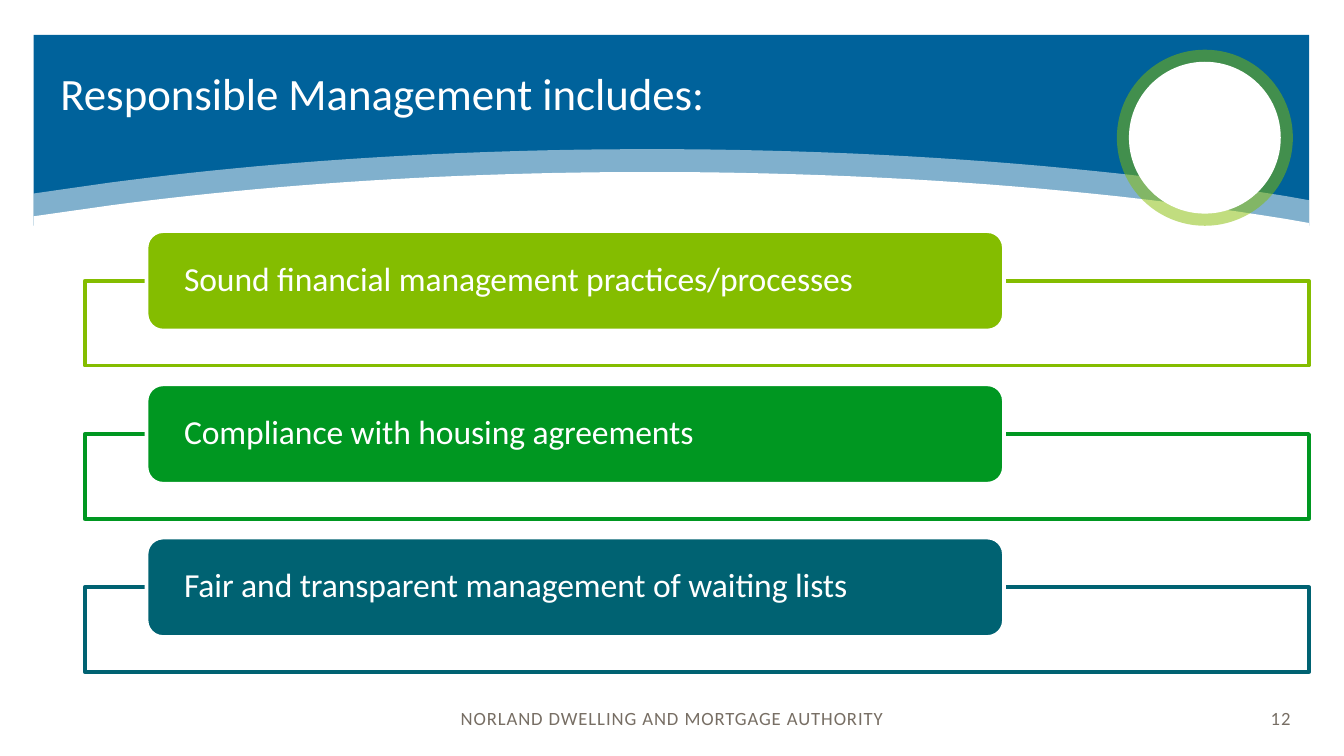
from pptx import Presentation
from pptx.dml.color import RGBColor
from pptx.enum.shapes import MSO_SHAPE
from pptx.enum.text import MSO_ANCHOR, PP_ALIGN
from pptx.oxml.ns import qn
from pptx.util import Pt
from lxml.etree import SubElement

PX = 9144  # EMU per px, 100 px to the inch
FONT = "Calibri"
COLORS = {
    "blue": "00629B",
    "lime": "84BD00",
    "green": "009721",
    "teal": "006272",
    "white": "FFFFFF",
    "grey": "776E64",
}
PRACTICES = [
    ("Sound financial management practices/processes", "lime"),
    ("Compliance with housing agreements", "green"),
    ("Fair and transparent management of waiting lists", "teal"),
]


def px(*lengths):
    return [round(length * PX) for length in lengths]


def rgb(name):
    return RGBColor.from_string(COLORS[name])


def paint(shape, fill, opacity=100, line=None):
    shape.shadow.inherit = False
    shape.fill.solid()
    shape.fill.fore_color.rgb = rgb(fill)
    if opacity < 100:
        color = shape.element.spPr.find(qn("a:solidFill"))[0]
        SubElement(color, qn("a:alpha")).set("val", str(opacity * 1000))
    if line:
        shape.line.color.rgb = rgb(line)
        shape.line.width = Pt(2)
    else:
        shape.line.fill.background()


def add_shape(page, kind, box, fill, opacity=100, line=None):
    shape = page.shapes.add_shape(kind, *px(*box))
    paint(shape, fill, opacity, line)
    return shape


def write(shape, text, size, color, align=PP_ALIGN.LEFT, spacing=0, side=0):
    frame = shape.text_frame
    frame.word_wrap = True
    frame.vertical_anchor = MSO_ANCHOR.MIDDLE
    frame.margin_left = frame.margin_right = side * PX
    frame.margin_top = frame.margin_bottom = 0
    frame.text = text
    para = frame.paragraphs[0]
    para.alignment = align
    span = para.runs[0]
    span.font.name = FONT
    span.font.size = Pt(size)
    span.font.color.rgb = rgb(color)
    if spacing:
        span.font._element.set("spc", str(spacing))
    return para


def curve(points, steps=24):
    """Points along a cubic Bezier curve."""
    for step in range(steps + 1):
        t = step / steps
        weights = ((1 - t) ** 3, 3 * t * (1 - t) ** 2, 3 * t * t * (1 - t), t ** 3)
        yield tuple(sum(w * point[axis] for w, point in zip(weights, points))
                    for axis in (0, 1))


def add_wave(page, left, top, bottom, opacity):
    rise = [(56, 25), (176, 9), (313, 0), (459, 0)]
    fall = [(459, 0), (634, 0), (797, 13), (932, 35)]
    depth = bottom - top
    outline = [(0, 33), *curve(rise), *curve(fall), (949, 38), (949, depth), (0, depth)]
    points = [px(left + x, top + y) for x, y in outline]
    builder = page.shapes.build_freeform(*points[0], scale=1.0)
    builder.add_line_segments(points[1:], close=True)
    paint(builder.convert_to_shape(), "white", opacity)


def add_banner(page, left, top, width, height):
    add_shape(page, MSO_SHAPE.RECTANGLE, (left, top, width, height), "blue")
    for offset, opacity in ((85, 50), (102, 100)):
        add_wave(page, left, top + offset, top + 153, opacity)
    # Ring at the right end
    for inset, fill, opacity in ((0, "lime", 50), (9, "white", 100)):
        size = 131 - 2 * inset
        box = (left + 806 + inset, top + 11 + inset, size, size)
        add_shape(page, MSO_SHAPE.OVAL, box, fill, opacity)
    # Title, brought in front of the banner
    title = page.shapes.title
    page.shapes.element.append(title.element)
    title.left, title.top, title.width, title.height = px(left + 10, top, 786, 89)
    para = write(title, "Responsible Management includes:", 24, "white", side=10)
    para.line_spacing = Pt(26)


def add_practice(page, left, top, width, text, color):
    add_shape(page, MSO_SHAPE.RECTANGLE, (left, top + 37, width, 63), "white", 90, color)
    add_shape(page, MSO_SHAPE.ROUNDED_RECTANGLE,
              (left + 46, top, 638, 74), color, line="white")
    label = page.shapes.add_textbox(*px(left + 50, top + 3, 630, 67))
    para = write(label, text, 18, "white", spacing=-5, side=24)
    para.line_spacing = 0.9


def add_footer(page, left, top, width, height):
    strip = add_shape(page, MSO_SHAPE.RECTANGLE, (left, top, width, height), "white")
    write(strip, "NORLAND DWELLING AND MORTGAGE AUTHORITY", 10, "grey",
          PP_ALIGN.CENTER, 50)
    number = page.shapes.add_textbox(*px(left + 914, top, 56, height))
    write(number, "12", 10, "grey", PP_ALIGN.RIGHT, 50, side=10)


def main():
    deck = Presentation()
    deck.slide_width = 1000 * PX
    deck.slide_height = deck.slide_width * 9 // 16
    page = deck.slides.add_slide(deck.slide_layouts[5])
    add_banner(page, 25, 26, 949, 142)
    add_footer(page, 0, 505, 1000, 58)
    for row, (text, color) in enumerate(PRACTICES):
        add_practice(page, 63, 172 + 114 * row, 911, text, color)
    deck.save("out.pptx")


if __name__ == "__main__":
    main()
